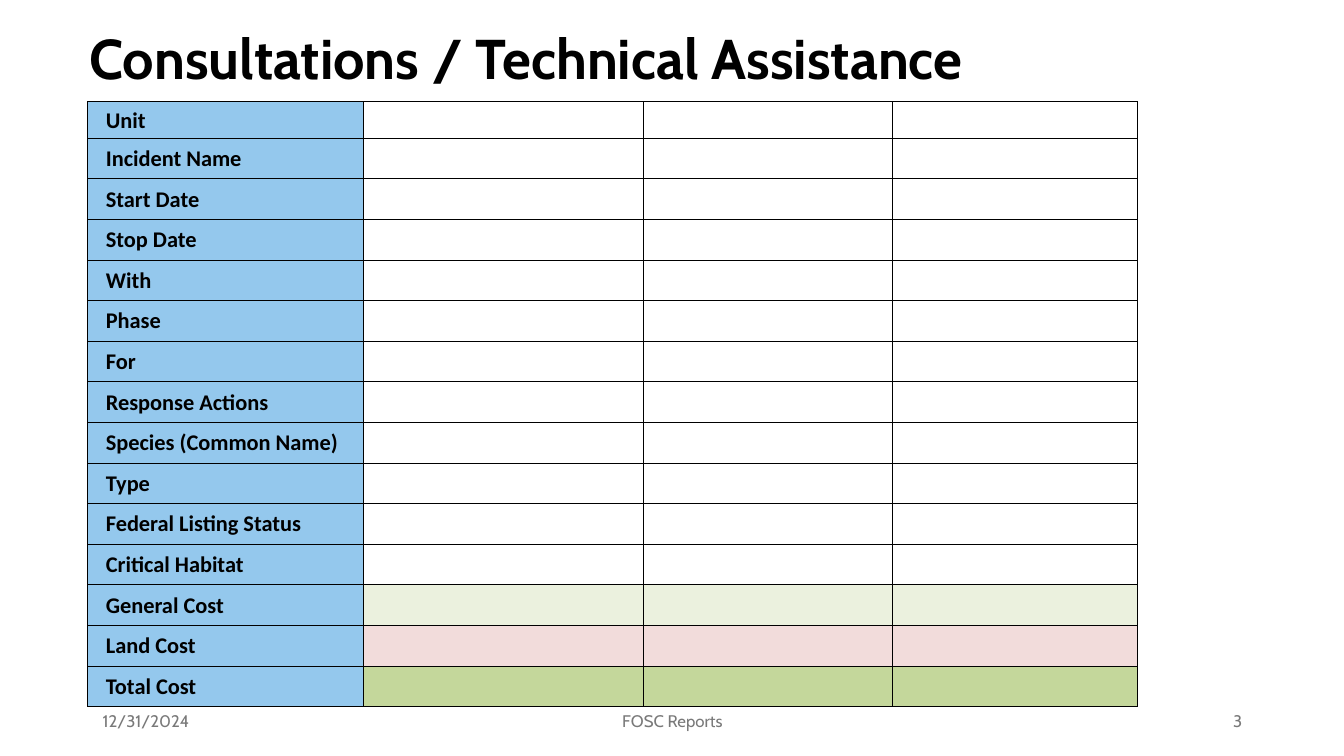
import pptx
import pptx.dml.color
import pptx.enum.text
import pptx.oxml
import pptx.oxml.ns
import pptx.util

WIDTH, HEIGHT = 13.33, 7.5
ROW_LABELS = [
    "Unit", "Incident Name", "Start Date", "Stop Date", "With", "Phase", "For",
    "Response Actions", "Species (Common Name)", "Type", "Federal Listing Status",
    "Critical Habitat", "General Cost", "Land Cost", "Total Cost",
]
COST_FILLS = {"General Cost": "EBF1DE", "Land Cost": "F2DCDB", "Total Cost": "C4D79B"}
LABEL_FILL = "94C8ED"
COLUMN_WIDTHS = [2.73, 2.78, 2.47, 2.43]
FIRST_ROW_HEIGHT = 0.36
LABEL_FONT = {"name": "Calibri", "size": pptx.util.Pt(16), "bold": True}
TITLE_FONT = {"name": "Cabin", "size": pptx.util.Pt(40), "bold": True}
FOOTER_FONT = {"name": "Cabin", "size": pptx.util.Pt(12)}
CELL_MARGINS = {
    "margin_left": pptx.util.Inches(0.18),
    "margin_right": pptx.util.Inches(0.01),
    "margin_top": pptx.util.Inches(0.01),
    "margin_bottom": 0,
    "vertical_anchor": pptx.enum.text.MSO_ANCHOR.MIDDLE,
}
ALIGN = pptx.enum.text.PP_ALIGN


def color(hex_string):
    """Turn a hex string into a colour."""
    return pptx.dml.color.RGBColor.from_string(hex_string)


def inches(box):
    """Turn a box of numbers into lengths in inches."""
    return [pptx.util.Inches(value) for value in box]


def apply(target, values):
    """Set each named attribute on the target."""
    for name, value in values.items():
        setattr(target, name, value)


def write(frame, text, font, hex_color, alignment=ALIGN.LEFT):
    """Write one formatted paragraph into a text frame."""
    paragraph = frame.paragraphs[0]
    paragraph.alignment = alignment
    run = paragraph.add_run()
    run.text = text
    apply(run.font, font)
    run.font.color.rgb = color(hex_color)
    return paragraph


def add_borders(cell):
    """Draw thin black lines on the four sides of a cell."""
    properties = cell._tc.get_or_add_tcPr()
    for side in ("lnL", "lnR", "lnT", "lnB"):
        properties.append(pptx.oxml.parse_xml(
            f'<a:{side} {pptx.oxml.ns.nsdecls("a")} w="6350"><a:solidFill>'
            f'<a:srgbClr val="000000"/></a:solidFill></a:{side}>'))


def fill_cell(cell, hex_color):
    """Fill a cell with a colour, or leave it clear."""
    if hex_color:
        cell.fill.solid()
        cell.fill.fore_color.rgb = color(hex_color)
    else:
        cell.fill.background()


def add_title(slide, box):
    """Place the slide title in its placeholder."""
    title = slide.shapes.title
    apply(title, dict(zip(("left", "top", "width", "height"), inches(box))))
    apply(title.text_frame, {
        "auto_size": pptx.enum.text.MSO_AUTO_SIZE.NONE,
        "vertical_anchor": pptx.enum.text.MSO_ANCHOR.BOTTOM,
        "word_wrap": True,
    })
    paragraph = write(title.text_frame, "Consultations / Technical Assistance ",
                      TITLE_FONT, "000000", ALIGN.CENTER)
    paragraph.line_spacing = 0.9


def add_consultation_table(slide, box):
    """Build the table of labelled rows with empty entry columns."""
    table = slide.shapes.add_table(
        len(ROW_LABELS), len(COLUMN_WIDTHS), *inches(box)).table
    apply(table, {"first_row": False, "horz_banding": False})
    for column, width in zip(table.columns, COLUMN_WIDTHS):
        column.width = pptx.util.Inches(width)
    row_height = (box[3] - FIRST_ROW_HEIGHT) / (len(ROW_LABELS) - 1)
    for index, (row, label) in enumerate(zip(table.rows, ROW_LABELS)):
        row.height = pptx.util.Inches(row_height if index else FIRST_ROW_HEIGHT)
        for position, cell in enumerate(row.cells):
            apply(cell, CELL_MARGINS)
            add_borders(cell)
            fill_cell(cell, COST_FILLS.get(label) if position else LABEL_FILL)
        write(row.cells[0].text_frame, label, LABEL_FONT, "000000")


def add_footer(slide, box):
    """Place date, report name and slide number along the bottom."""
    left, top, width, height = box
    side, middle = 3, 4.5
    parts = [
        ("12/31/2024", left, side, ALIGN.LEFT),
        ("FOSC Reports", left + (width - middle) / 2, middle, ALIGN.CENTER),
        ("3", left + width - side, side, ALIGN.RIGHT),
    ]
    for text, part_left, part_width, alignment in parts:
        shape = slide.shapes.add_textbox(*inches((part_left, top, part_width, height)))
        apply(shape.text_frame, {
            "word_wrap": True,
            "vertical_anchor": pptx.enum.text.MSO_ANCHOR.MIDDLE,
        })
        write(shape.text_frame, text, FOOTER_FONT, "797979", alignment)


def main():
    """Build the slide and save it."""
    presentation = pptx.Presentation()
    presentation.slide_width, presentation.slide_height = inches((WIDTH, HEIGHT))
    slide = presentation.slides.add_slide(presentation.slide_layouts[5])
    add_consultation_table(slide, (0.87, 1.01, sum(COLUMN_WIDTHS), 6))
    add_title(slide, (0.77, 0.08, 9.02, 0.88))
    add_footer(slide, (0.92, 6.95, 11.5, 0.4))
    presentation.save("out.pptx")


if __name__ == "__main__":
    main()
